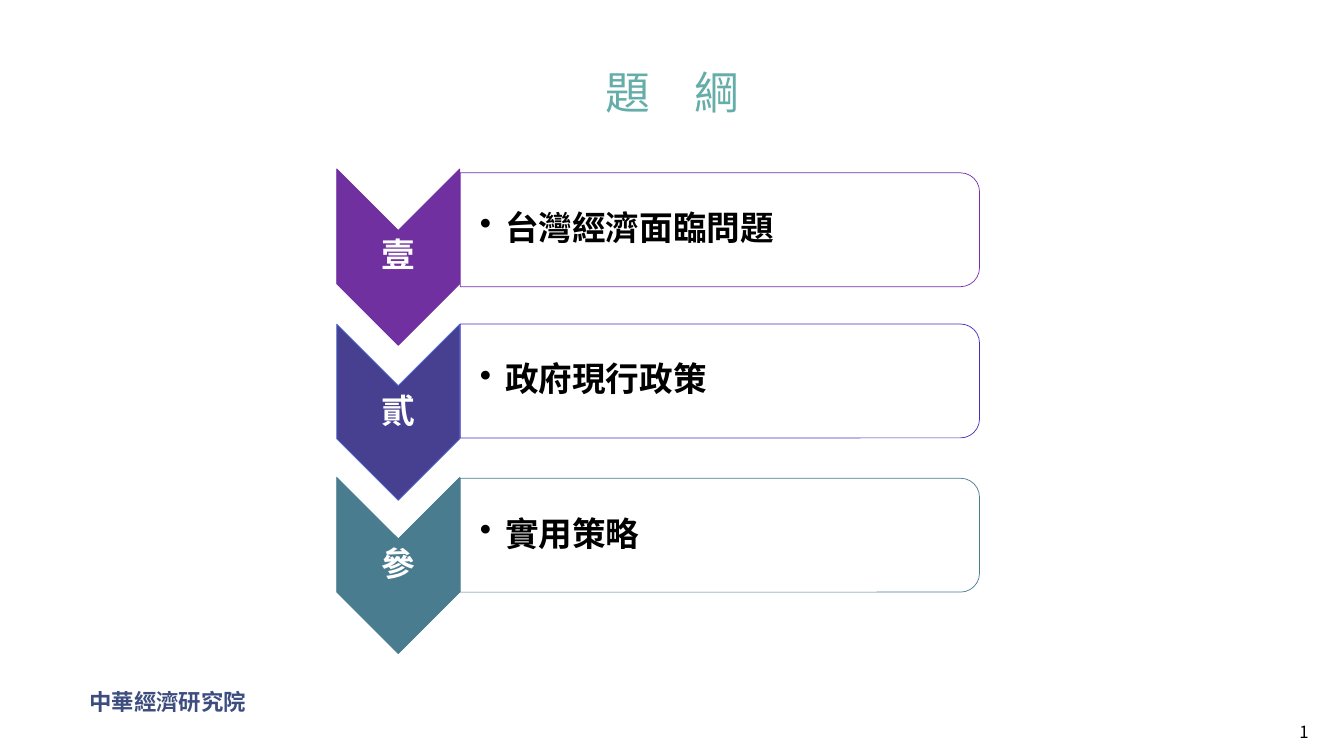
from lxml.etree import SubElement as Sub
from pptx import Presentation
from pptx.dml.color import RGBColor as Rgb
from pptx.enum.shapes import MSO_SHAPE as Form
from pptx.enum.text import MSO_ANCHOR as Anchor, PP_ALIGN as Align
from pptx.oxml.ns import qn
from pptx.util import Inches, Pt

SANS = "Noto Sans CJK SC"
HEAD = "Noto Sans CJK JP"
HUES = {
    "title": "65ADA8", "foot": "3D4D7F", "black": "000000", "white": "FFFFFF",
    "plum": "7030A0", "violet": "762EB1", "indigo": "474091",
    "blue": "5070D4", "iris": "482CBC", "teal": "4A7C90",
}
ROWS = [
    ("壹", "台灣經濟面臨問題", 2.55, 2.28, "plum", "plum", "violet"),
    ("貳", "政府現行政策", 4.09, 3.78, "indigo", "blue", "iris"),
    ("參", "實用策略", 5.61, 5.31, "teal", "teal", "teal"),
]


def tint(hue):
    return Rgb.from_string(HUES[hue])


def write(para, words, size, hue, bold=False, face=SANS):
    run = para.add_run()
    run.text = words
    font = run.font
    font.size, font.bold, font.name = Pt(size), bold, face
    font.color.rgb = tint(hue)
    Sub(font._element, qn("a:ea"), typeface=face)
    return run


def label(slide, left, top, width, height, align=Align.LEFT, pad=0.02, inset=0.02):
    box = slide.shapes.add_textbox(*map(Inches, (left, top, width, height)))
    frame = box.text_frame
    frame.word_wrap = True
    frame.vertical_anchor = Anchor.MIDDLE
    frame.margin_left = Inches(inset)
    frame.margin_right = frame.margin_top = frame.margin_bottom = Inches(pad)
    para = frame.paragraphs[0]
    para.alignment = align
    return para


def turned(slide, form, mid_x, mid_y, width, height, line, fill=None):
    shape = slide.shapes.add_shape(
        form, Inches(mid_x - width / 2), Inches(mid_y - height / 2),
        Inches(width), Inches(height))
    shape.rotation = 90
    shape.shadow.inherit = False
    if fill:
        shape.fill.solid()
        shape.fill.fore_color.rgb = tint(fill)
    else:
        shape.fill.background()
    shape.line.color.rgb = tint(line)
    shape.line.width = Pt(0.5)


def bullet(para):
    props = para._p.get_or_add_pPr()
    props.set("marL", str(Inches(0.25)))
    props.set("indent", str(-Inches(0.25)))
    Sub(props, qn("a:buChar"), char="•")


def row(slide, mark, words, arrow_y, panel_y, fill, edge, rim):
    turned(slide, Form.CHEVRON, 3.95, arrow_y, 1.75, 1.22, edge, fill)
    para = label(slide, 3.34, arrow_y - 0.26, 1.22, 0.52, Align.CENTER)
    para.line_spacing = 0.9
    write(para, mark, 24, "white", True)
    turned(slide, Form.ROUND_2_SAME_RECTANGLE, 7.14, panel_y, 1.13, 5.15, rim)
    para = label(slide, 4.57, panel_y - 0.51, 5.09, 1.02, inset=0.19)
    para.line_spacing = 0.9
    bullet(para)
    write(para, words, 24, "black", True)


def title(slide, words):
    head = slide.shapes.title
    head.left, head.top = Inches(0.92), Inches(0.4)
    head.width, head.height = Inches(11.5), Inches(1.08)
    head.text_frame.vertical_anchor = Anchor.MIDDLE
    para = head.text_frame.paragraphs[0]
    para.alignment = Align.CENTER
    para.line_spacing = 0.9
    write(para, words, 32, "title", face=HEAD)


def number(slide):
    para = label(slide, 10.87, 7.05, 2.21, 0.41, Align.RIGHT, 0.05, 0.1)
    para._p.getparent().getparent().txBody.bodyPr.set("rIns", str(Inches(0.1)))
    run = write(para, "2", 12, "black")._r
    run.tag = qn("a:fld")
    run.set("id", "{B6F15528-21DE-4FAA-801E-634DDDAF4B2B}")
    run.set("type", "slidenum")


def main():
    deck = Presentation()
    deck.slide_width, deck.slide_height = Inches(13.33), Inches(7.5)
    slide = deck.slides.add_slide(deck.slide_layouts[5])
    title(slide, "題　綱")
    for item in ROWS:
        row(slide, *item)
    foot = label(slide, 0.79, 6.77, 1.81, 0.37, pad=0.05, inset=0.1)
    write(foot, "中華經濟研究院", 16, "foot", True)
    number(slide)
    deck.save("out.pptx")


if __name__ == "__main__":
    main()
